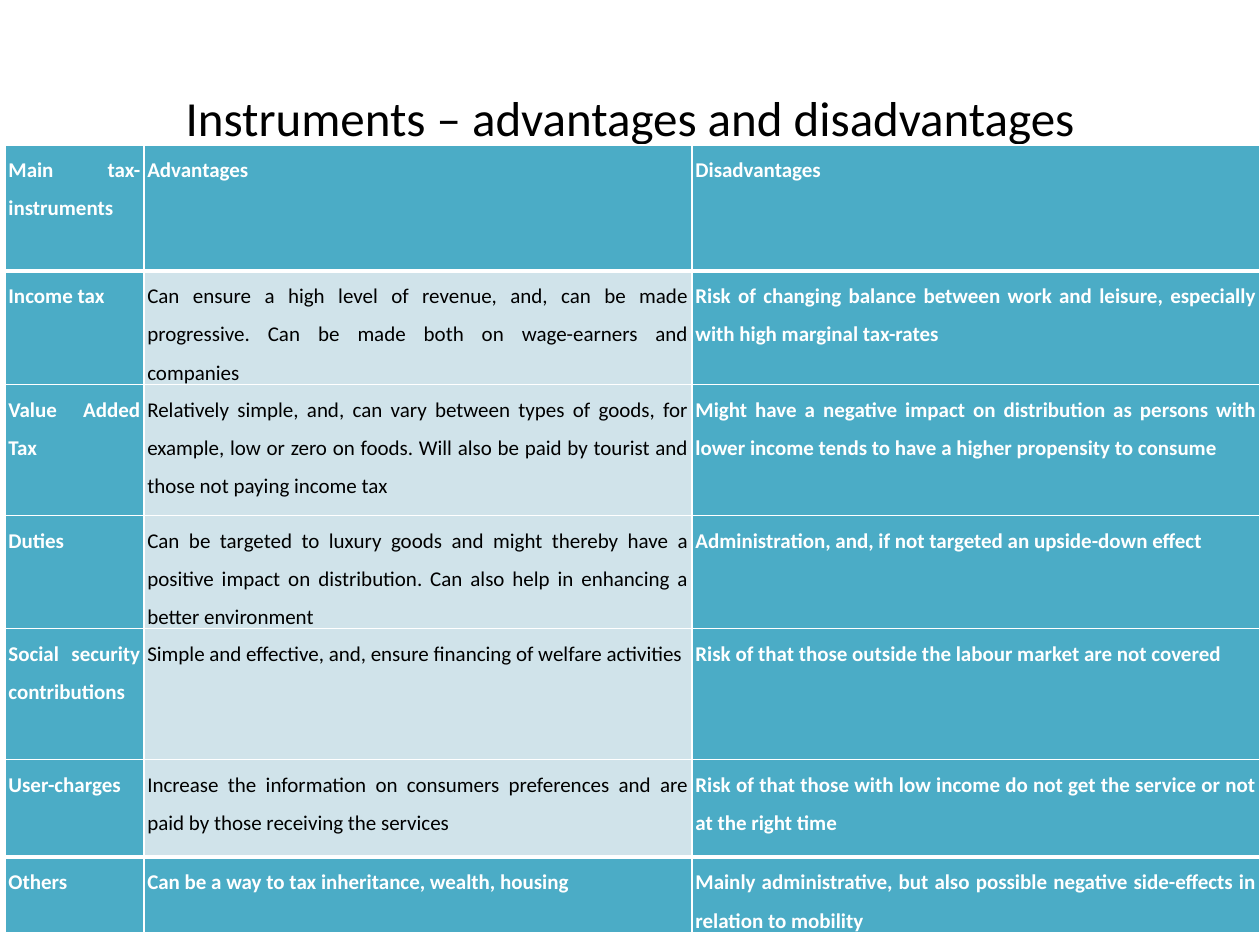
from lxml.etree import SubElement
from pptx import Presentation
from pptx.dml.color import RGBColor
from pptx.enum.text import MSO_ANCHOR as Anchor, PP_ALIGN as Align
from pptx.oxml.ns import qn
from pptx.util import Cm, Pt

FONT = "Calibri"
BLACK, WHITE, TEAL, PALE = "000000", "FFFFFF", "4BACC6", "D0E3EA"
THIN, THICK = 1, 3

COLUMN_WIDTHS = [2.8, 11.05, 11.45]
ROW_HEIGHTS = [2.54, 1.96, 2.64, 1.96, 2.64, 1.96, 0.84]
ROWS = [
    ("Main tax-instruments", "Advantages", "Disadvantages"),
    ("Income tax",
     "Can ensure a high level of revenue, and, can be made progressive. "
     "Can be made both on wage-earners and companies",
     "Risk of changing balance between work and leisure, especially with "
     "high marginal tax-rates"),
    ("Value Added Tax",
     "Relatively simple, and, can vary between types of goods, for example, "
     "low or zero on foods. Will also be paid by tourist and those not paying "
     "income tax",
     "Might have a negative impact on distribution as persons with lower "
     "income tends to have a higher propensity to consume"),
    ("Duties",
     "Can be targeted to luxury goods and might thereby have a positive impact "
     "on distribution. Can also help in enhancing a better environment",
     "Administration, and, if not targeted an upside-down effect"),
    ("Social security contributions",
     "Simple and effective, and, ensure financing of welfare activities",
     "Risk of that those outside the labour market are not covered"),
    ("User-charges",
     "Increase the information on consumers preferences and are paid by those "
     "receiving the services",
     "Risk of that those with low income do not get the service or not at the "
     "right time"),
    ("Others",
     "Can be a way to tax inheritance, wealth, housing",
     "Mainly administrative, but also possible negative side-effects in "
     "relation to mobility"),
]


def color(value):
    return RGBColor.from_string(value)


def set_format(target, values):
    for name, value in values.items():
        setattr(target, name, value)


def write_text(frame, text, font_color, font_format, paragraph_format):
    paragraph = frame.paragraphs[0]
    set_format(paragraph, paragraph_format)
    run = paragraph.add_run()
    run.text = text
    set_format(run.font, {"name": FONT, **font_format})
    run.font.color.rgb = color(font_color)


def set_borders(cell, widths):
    """Draw white cell borders; widths maps L, R, T and B to points."""
    properties = cell._tc.get_or_add_tcPr()
    for index, (side, width) in enumerate(widths.items()):
        line = properties.makeelement(qn(f"a:ln{side}"), {"w": str(Pt(width))})
        fill = SubElement(line, qn("a:solidFill"))
        SubElement(fill, qn("a:srgbClr"), val=WHITE)
        properties.insert(index, line)


def add_title(slide, text):
    shape = slide.shapes.add_textbox(Cm(1.27), Cm(0.76), Cm(22.86), Cm(3.18))
    set_format(shape.text_frame,
               {"word_wrap": True, "vertical_anchor": Anchor.MIDDLE})
    write_text(shape.text_frame, text, BLACK, {"size": Pt(28)},
               {"alignment": Align.CENTER})


def fill_cell(cell, text, is_body, borders):
    set_format(cell, {"margin_left": Cm(0.07), "margin_right": Cm(0.07),
                      "margin_top": 0, "margin_bottom": 0})
    cell.fill.solid()
    cell.fill.fore_color.rgb = color(PALE if is_body else TEAL)
    write_text(cell.text_frame, text, BLACK if is_body else WHITE,
               {"size": Pt(12), "bold": not is_body},
               {"alignment": Align.JUSTIFY, "line_spacing": 1.5})
    set_borders(cell, borders)


def add_instrument_table(slide):
    table = slide.shapes.add_table(
        len(ROWS), len(COLUMN_WIDTHS), Cm(0.1), Cm(2.92),
        Cm(sum(COLUMN_WIDTHS)), Cm(sum(ROW_HEIGHTS))).table
    for column, width in zip(table.columns, COLUMN_WIDTHS):
        column.width = Cm(width)
    for row, height in zip(table.rows, ROW_HEIGHTS):
        row.height = Cm(height)

    last = len(ROWS) - 1
    for row_index, texts in enumerate(ROWS):
        borders = {"L": THIN, "R": THIN,
                   "T": THICK if row_index in (1, last) else THIN,
                   "B": THICK if row_index in (0, last - 1) else THIN}
        for column_index, text in enumerate(texts):
            is_body = column_index == 1 and 0 < row_index < last
            fill_cell(table.cell(row_index, column_index), text, is_body, borders)


def main():
    presentation = Presentation()
    set_format(presentation, {"slide_width": Cm(25.4), "slide_height": Cm(19.05)})
    slide = presentation.slides.add_slide(presentation.slide_layouts[6])
    add_title(slide, "Instruments – advantages and disadvantages")
    add_instrument_table(slide)
    presentation.save("out.pptx")


if __name__ == "__main__":
    main()
